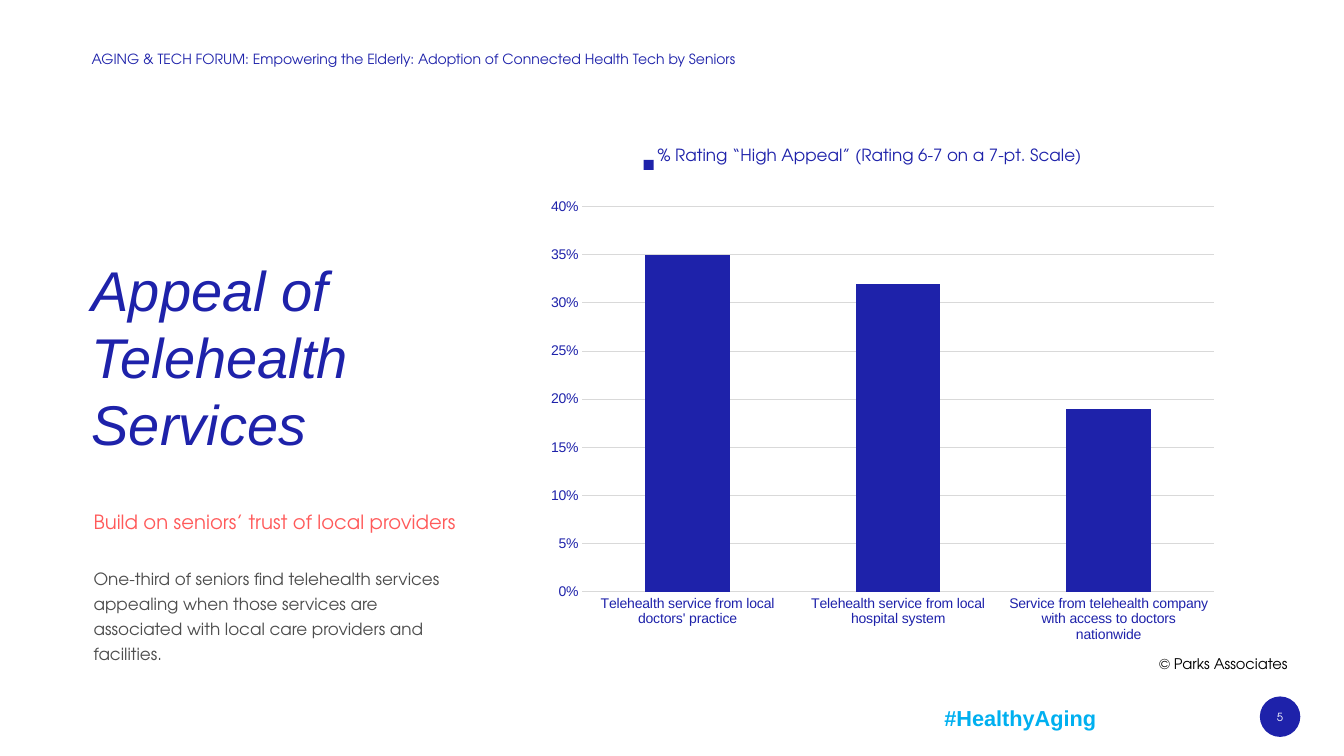
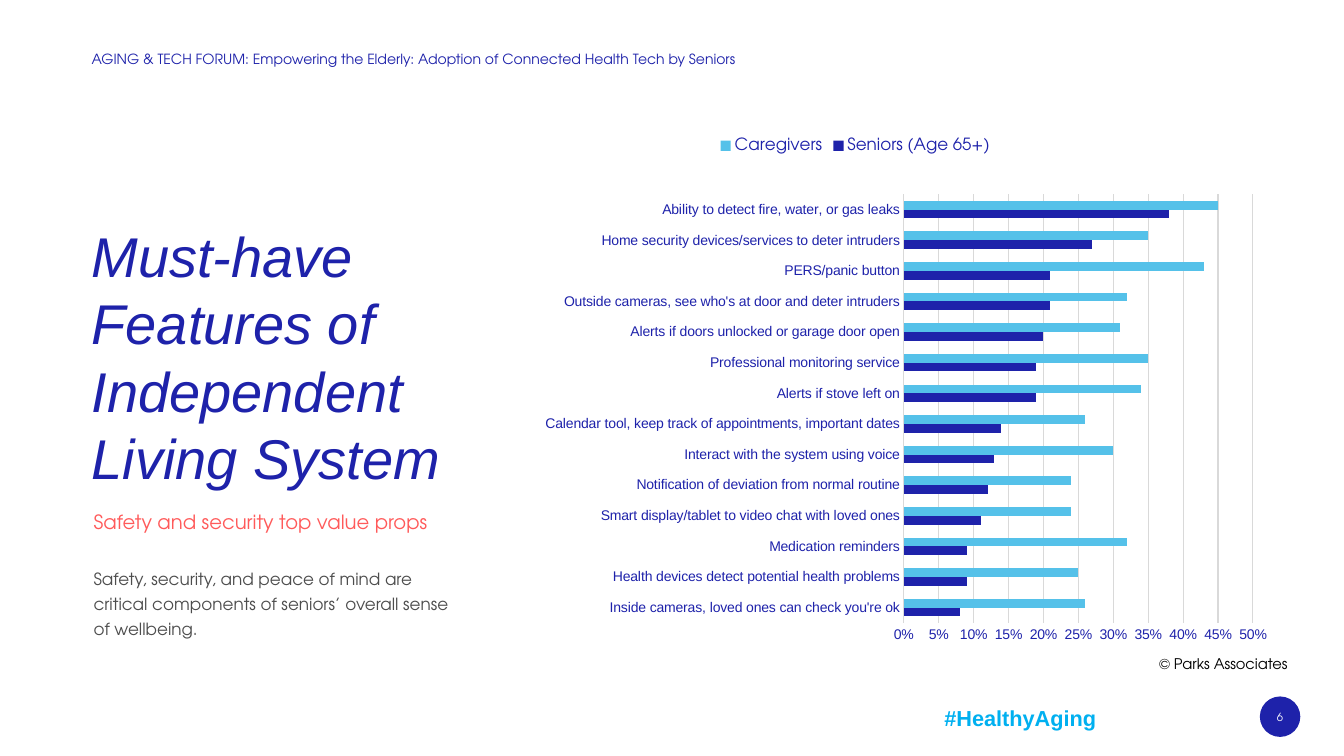
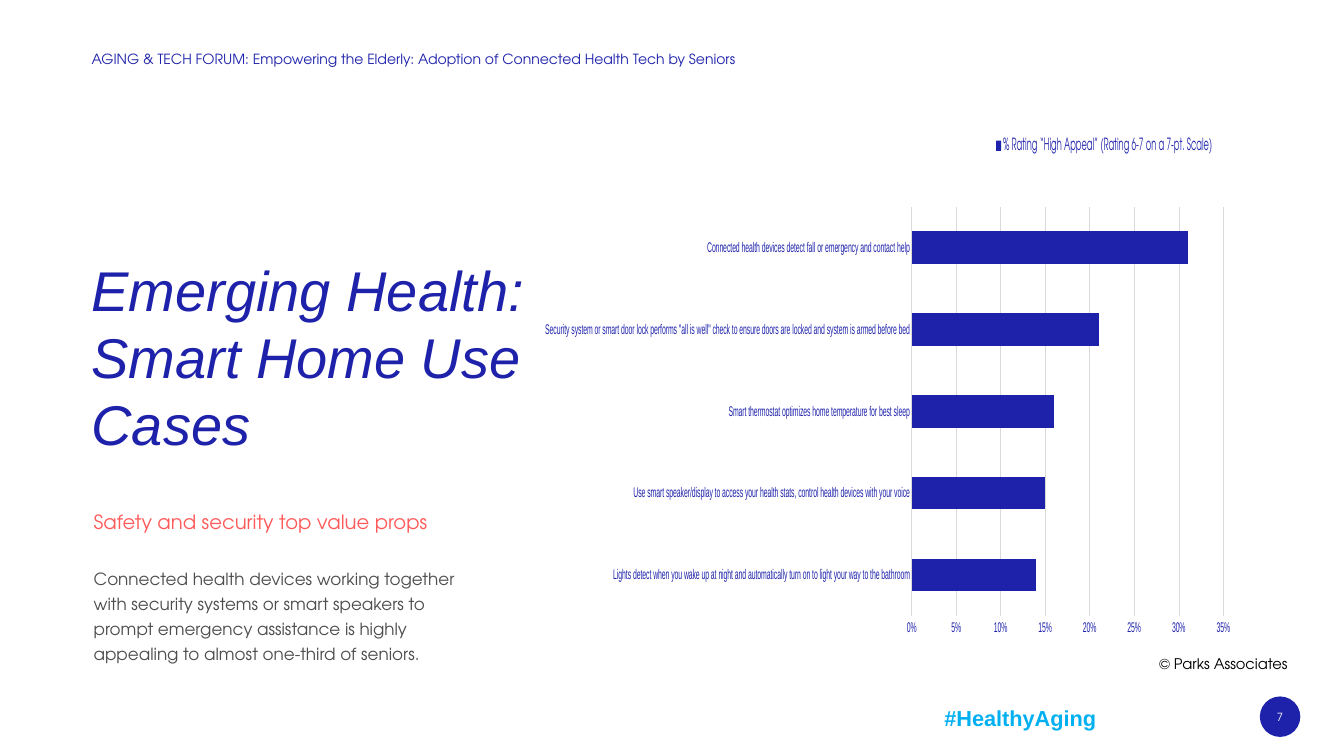
"""Builds three slides on the appeal of connected health tech to seniors."""
from pptx import Presentation
from pptx.chart.data import CategoryChartData
from pptx.dml.color import RGBColor
from pptx.enum.chart import XL_CHART_TYPE, XL_LEGEND_POSITION, XL_TICK_MARK
from pptx.enum.shapes import MSO_SHAPE
from pptx.enum.text import MSO_ANCHOR, PP_ALIGN
from pptx.oxml import parse_xml
from pptx.oxml.ns import nsdecls
from pptx.util import Cm, Pt

HUES = {"navy": "1E22AA", "sky": "55C1E9", "cyan": "00B0F0", "coral": "FF5A5A",
        "gray": "4D4D4D", "rule": "D9D9D9", "white": "FFFFFF", "black": "000000"}
TONE = {name: RGBColor.from_string(code) for name, code in HUES.items()}
SANS = "Arial"
GEO = "TeX Gyre Adventor"
RATING = "% Rating “High Appeal” (Rating 6-7 on a 7-pt. Scale)"

PAGES = [
    {"title": "Appeal of Telehealth Services",
     "sub": "Build on seniors’ trust of local providers",
     "body": "One-third of seniors find telehealth services appealing when those "
             "services are associated with local care providers and facilities.",
     "kind": XL_CHART_TYPE.COLUMN_CLUSTERED, "left": 13.74, "width": 17.32,
     "plot": (0.054, 0.136, 0.919, 0.649), "key": (0.135, 0.032), "top": 0.4,
     "cats": ["Telehealth service from local doctors' practice",
              "Telehealth service from local hospital system",
              "Service from telehealth company with access to doctors nationwide"],
     "rows": [(RATING + "\n", "navy", [0.35, 0.32, 0.19])]},
    {"title": "Must-have Features of Independent Living System",
     "sub": "Safety and security top value props",
     "body": "Safety, security, and peace of mind are critical components of "
             "seniors’ overall sense of wellbeing.",
     "kind": XL_CHART_TYPE.BAR_CLUSTERED, "left": 12.78, "width": 19.56,
     "plot": (0.511, 0.115, 0.45, 0.723), "key": (0.268, 0.013), "top": 0.5,
     "cats": ["Inside cameras, loved ones can check you're ok",
              "Health devices detect potential health problems",
              "Medication reminders",
              "Smart display/tablet to video chat with loved ones",
              "Notification of deviation from normal routine",
              "Interact with the system using voice",
              "Calendar tool, keep track of appointments, important dates",
              "Alerts if stove left on",
              "Professional monitoring service",
              "Alerts if doors unlocked or garage door open",
              "Outside cameras, see who's at door and deter intruders",
              "PERS/panic button",
              "Home security devices/services to deter intruders",
              "Ability to detect fire, water, or gas leaks"],
     "rows": [("Seniors (Age 65+)", "navy",
               [0.08, 0.09, 0.09, 0.11, 0.12, 0.13, 0.14,
                0.19, 0.19, 0.2, 0.21, 0.21, 0.27, 0.38]),
              ("Caregivers", "sky",
               [0.26, 0.25, 0.32, 0.24, 0.24, 0.3, 0.26,
                0.34, 0.35, 0.31, 0.32, 0.43, 0.35, 0.45])]},
    {"title": "Emerging Health: Smart Home Use Cases",
     "sub": "Safety and security top value props",
     "body": "Connected health devices working together with security systems or "
             "smart speakers to prompt emergency assistance is highly appealing "
             "to almost one-third of seniors.",
     "kind": XL_CHART_TYPE.BAR_CLUSTERED, "left": 13.74, "width": 17.32,
     "plot": (0.054, 0.136, 0.919, 0.69), "key": (0.295, 0.013), "top": 0.35,
     "cats": ["Lights detect when you wake up at night and automatically turn on "
              "to light your way to the bathroom",
              "Use smart speaker/display to access your health stats, control "
              "health devices with your voice",
              "Smart thermostat optimizes home temperature for best sleep",
              "Security system or smart door lock performs \"all is well\" check to "
              "ensure doors are locked and system is armed before bed",
              "Connected health devices detect fall or emergency and contact help"],
     "rows": [(RATING, "navy", [0.14, 0.15, 0.16, 0.21, 0.31])]},
]


def write(shape, text, size, tone, face=GEO, bold=False, slant=False, side=0, edge=0,
          wrap=True, anchor=MSO_ANCHOR.TOP, align=PP_ALIGN.LEFT, pitch=None):
    frame = shape.text_frame
    frame.word_wrap = wrap
    frame.vertical_anchor = anchor
    frame.margin_left = frame.margin_right = Cm(side)
    frame.margin_top = frame.margin_bottom = Cm(edge)
    para = frame.paragraphs[0]
    para.text = text
    para.alignment = align
    para.line_spacing = pitch
    font = para.font
    font.name, font.size, font.bold, font.italic = face, Pt(size), bold, slant
    font.color.rgb = TONE[tone]


def place(node, index, spots, inner=""):
    parts = "".join(f'<c:{edge}Mode val="edge"/>' for edge in "xy")
    parts += "".join(f'<c:{edge} val="{spot}"/>' for edge, spot in zip("xywh", spots))
    for old in node.xpath("c:layout"):
        node.remove(old)
    node.insert(index, parse_xml(f'<c:layout {nsdecls("c")}><c:manualLayout>'
                                 f'{inner}{parts}</c:manualLayout></c:layout>'))


deck = Presentation()
deck.slide_width, deck.slide_height = Cm(33.87), Cm(19.05)

for number, page in enumerate(PAGES, 5):
    shapes = deck.slides.add_slide(deck.slide_layouts[6]).shapes

    data = CategoryChartData(number_format="0%")
    data.categories = page["cats"]
    for name, tone, values in page["rows"]:
        data.add_series(name, values)
    chart = shapes.add_chart(page["kind"], Cm(page["left"]), Cm(3.18),
                             Cm(page["width"]), Cm(14.94), data).chart
    chart.has_title = False
    chart.font.name, chart.font.size = GEO, Pt(12)
    plot = chart.plots[0]
    plot.gap_width = 150
    plot.vary_by_categories = False
    for series, (name, tone, values) in zip(plot.series, page["rows"]):
        series.format.fill.solid()
        series.format.fill.fore_color.rgb = TONE[tone]

    chart.has_legend = True
    legend = chart.legend
    legend.position = XL_LEGEND_POSITION.BOTTOM
    legend.include_in_layout = False
    legend.font.name, legend.font.size = GEO, Pt(12)
    legend.font.color.rgb = TONE["navy"]

    cat, val = chart.category_axis, chart.value_axis
    for axis in (cat, val):
        axis.major_tick_mark = axis.minor_tick_mark = XL_TICK_MARK.NONE
        font = axis.tick_labels.font
        font.name, font.size = SANS, Pt(10)
        font.color.rgb = TONE["navy"]
    val.has_major_gridlines = True
    for line in (cat.format.line, val.major_gridlines.format.line):
        line.width = Pt(0.75)
        line.color.rgb = TONE["rule"]
    val.format.line.fill.background()
    val.minimum_scale, val.maximum_scale, val.major_unit = 0, page["top"], 0.05
    val.tick_labels.number_format = "0%"
    val.tick_labels.number_format_is_linked = False
    place(chart.element.xpath(".//c:plotArea")[0], 0, page["plot"],
          '<c:layoutTarget val="inner"/>')
    place(chart.element.xpath(".//c:legend")[0], 1, page["key"])

    badge = shapes.add_shape(MSO_SHAPE.OVAL, Cm(31.75), Cm(17.55), Cm(1.02), Cm(1.02))
    badge.shadow.inherit = False
    badge.fill.solid()
    badge.fill.fore_color.rgb = TONE["navy"]
    badge.line.fill.background()
    write(badge, str(number), 8, "white", wrap=False,
          anchor=MSO_ANCHOR.MIDDLE, align=PP_ALIGN.CENTER)

    for text, spot, style in [
        ("AGING & TECH FORUM: Empowering the Elderly: Adoption of Connected Health "
         "Tech by Seniors", (2.31, 1.37, 17.98, 0.33),
         dict(size=10, tone="navy", pitch=0.75)),
        ("#HealthyAging", (23.55, 17.63, 4.95, 0.91),
         dict(size=15.5, tone="cyan", face=SANS, bold=True, side=0.25, edge=0.13)),
        (page["title"], (2.31, 6.5, 11.63, 4.95),
         dict(size=40, tone="navy", face=SANS, slant=True, pitch=Pt(48),
              anchor=MSO_ANCHOR.MIDDLE)),
        (page["sub"], (2.36, 12.73, 9.2, 0.86),
         dict(size=14, tone="coral", edge=0.13, wrap=False)),
        (page["body"], (2.36, 14.07, 9.2, 2.8),
         dict(size=12, tone="gray", edge=0.13, pitch=Pt(18))),
        ("© Parks Associates", (28.96, 16.36, 4.7, 0.74),
         dict(size=10.5, tone="black", side=0.25, edge=0.13)),
    ]:
        write(shapes.add_textbox(*map(Cm, spot)), text, **style)

deck.save("out.pptx")
